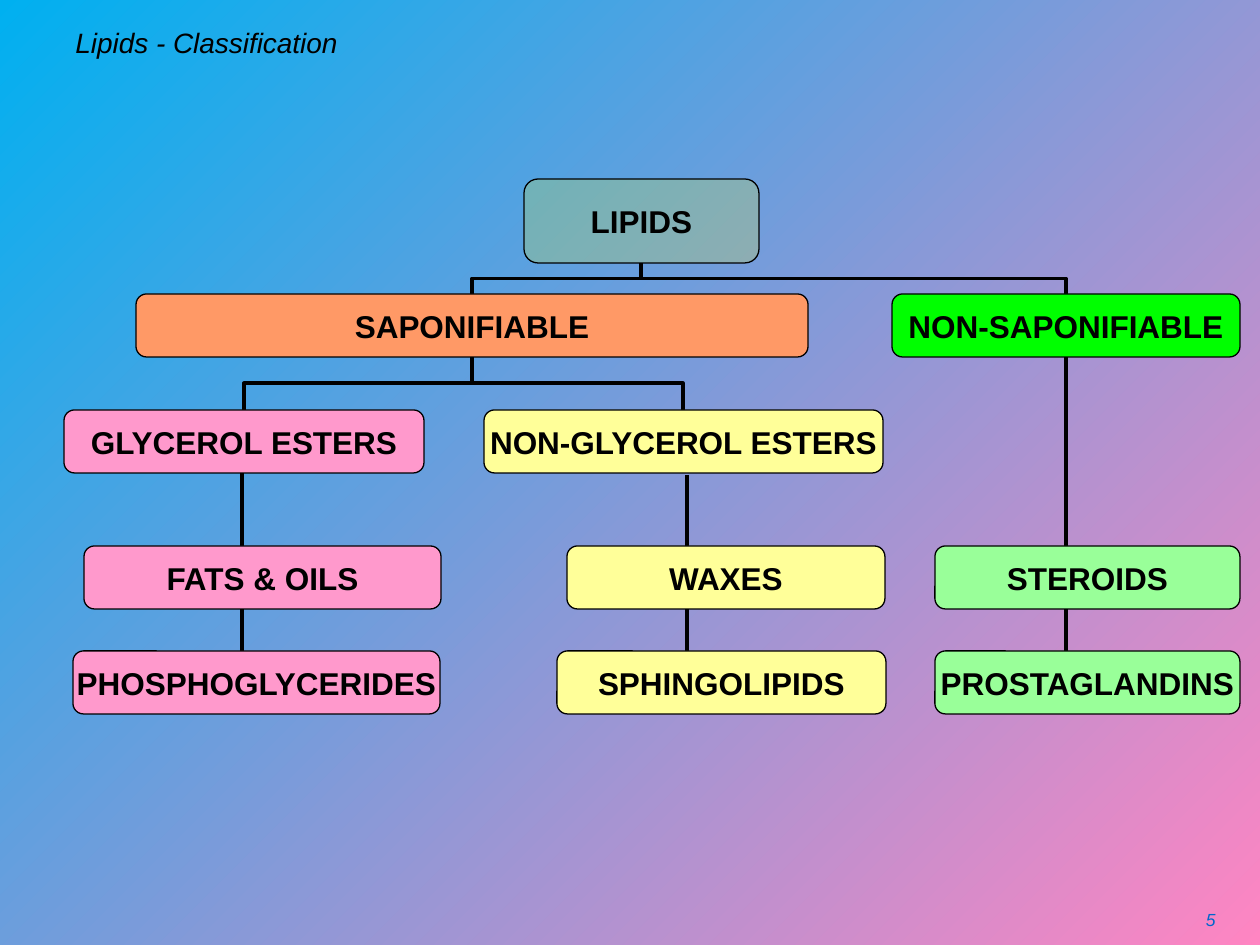
from lxml import etree
from pptx import Presentation, util as u
from pptx.dml.color import RGBColor
from pptx.enum import shapes, text
from pptx.oxml.ns import qn

PX = u.Inches(1) / 126


def px(*lengths):
    return [round(length * PX) for length in lengths]


def color(target, value):
    """Set a fill to solid, or a font colour, from a hex string."""
    if hasattr(target, "solid"):
        target.solid()
        target = target.fore_color
    target.rgb = RGBColor.from_string(value)


presentation = Presentation()
presentation.slide_width, presentation.slide_height = px(1260, 945)
slide = presentation.slides.add_slide(presentation.slide_layouts[6])

background = slide.background.fill
background.gradient()
background.gradient_angle = 315
for stop, (position, value) in zip(background.gradient_stops, [(0, "00B0F0"), (1, "FF85C2")]):
    stop.position = position
    color(stop.color, value)

# Title and slide number
captions = [
    ("Lipids - Classification", (63, 21, 1134, 42), 16, "000000",
     text.PP_ALIGN.LEFT, text.MSO_ANCHOR.MIDDLE),
    ("5", (1155, 903, 73, 42), 10, "0066CC", text.PP_ALIGN.RIGHT, text.MSO_ANCHOR.TOP),
]
for words, place, size, value, alignment, anchor in captions:
    frame = slide.shapes.add_textbox(*px(*place)).text_frame
    frame.word_wrap = True
    frame.vertical_anchor = anchor
    paragraph = frame.paragraphs[0]
    paragraph.text = words
    paragraph.alignment = alignment
    for name, setting in {"name": "Arial", "size": u.Pt(size), "italic": True}.items():
        setattr(paragraph.font, name, setting)
    color(paragraph.font.color, value)

# Connectors lie behind the boxes
lines = []
for x, top, bottom in [(1066, 357, 683), (687, 475, 683), (242, 451, 667)]:
    lines.append(slide.shapes.add_connector(
        shapes.MSO_CONNECTOR.STRAIGHT, *px(x, top, x, bottom)))
non_saponifiable_line = lines[0]

# Each branch leaves its parent downwards: an elbow turned by 90 degrees about its centre
branches = [(472, 357, 683, 410), (472, 357, 244, 410),
            (641, 263, 1066, 294), (641, 263, 472, 294)]
for parent_x, parent_y, child_x, child_y in branches:
    middle_x, middle_y = (parent_x + child_x) / 2, (parent_y + child_y) / 2
    half_drop, half_shift = (child_y - parent_y) / 2, (parent_x - child_x) / 2
    elbow = slide.shapes.add_connector(
        shapes.MSO_CONNECTOR.ELBOW,
        *px(middle_x - half_drop, middle_y - half_shift,
            middle_x + half_drop, middle_y + half_shift))
    elbow._element.spPr.find(qn("a:xfrm")).set("rot", "5400000")
    lines.append(elbow)

for line in lines:
    color(line.line.fill, "000000")
    line.line.width = u.Pt(2.25)
    etree.SubElement(line._element.spPr, qn("a:effectLst"))

# Class boxes: left, top, width, height
classes = [
    ("LIPIDS", (524, 179, 235, 84), "FFFF00"),
    ("SAPONIFIABLE", (136, 294, 672, 63), "FF9966"),
    ("NON-SAPONIFIABLE", (892, 294, 348, 63), "00FF00"),
    ("GLYCEROL ESTERS", (64, 410, 360, 63), "FF99CC"),
    ("NON-GLYCEROL ESTERS", (484, 410, 399, 63), "FFFF99"),
    ("FATS & OILS", (84, 546, 357, 63), "FF99CC"),
    ("PHOSPHOGLYCERIDES", (73, 651, 367, 63), "FF99CC"),
    ("WAXES", (567, 546, 318, 63), "FFFF99"),
    ("SPHINGOLIPIDS", (557, 651, 329, 63), "FFFF99"),
    ("STEROIDS", (935, 546, 305, 63), "99FF99"),
    ("PROSTAGLANDINS", (935, 651, 305, 63), "99FF99"),
]
boxes = {}
for words, place, value in classes:
    box = slide.shapes.add_shape(shapes.MSO_SHAPE.ROUNDED_RECTANGLE, *px(*place))
    box.shadow.inherit = False
    color(box.fill, value)
    color(box.line.fill, "000000")
    box.line.width = u.Pt(0.75)
    frame = box.text_frame
    frame.word_wrap = False
    frame.vertical_anchor = text.MSO_ANCHOR.MIDDLE
    paragraph = frame.paragraphs[0]
    paragraph.text = words
    paragraph.alignment = text.PP_ALIGN.CENTER
    for name, setting in {"name": "Arial", "size": u.Pt(18), "bold": True}.items():
        setattr(paragraph.font, name, setting)
    color(paragraph.font.color, "000000")
    boxes[words] = box

lipids_color = boxes["LIPIDS"]._element.spPr.find(qn("a:solidFill"))[0]
etree.SubElement(lipids_color, qn("a:alpha"), val="18000")
non_saponifiable_line.begin_connect(boxes["NON-SAPONIFIABLE"], 2)

presentation.save("out.pptx")
